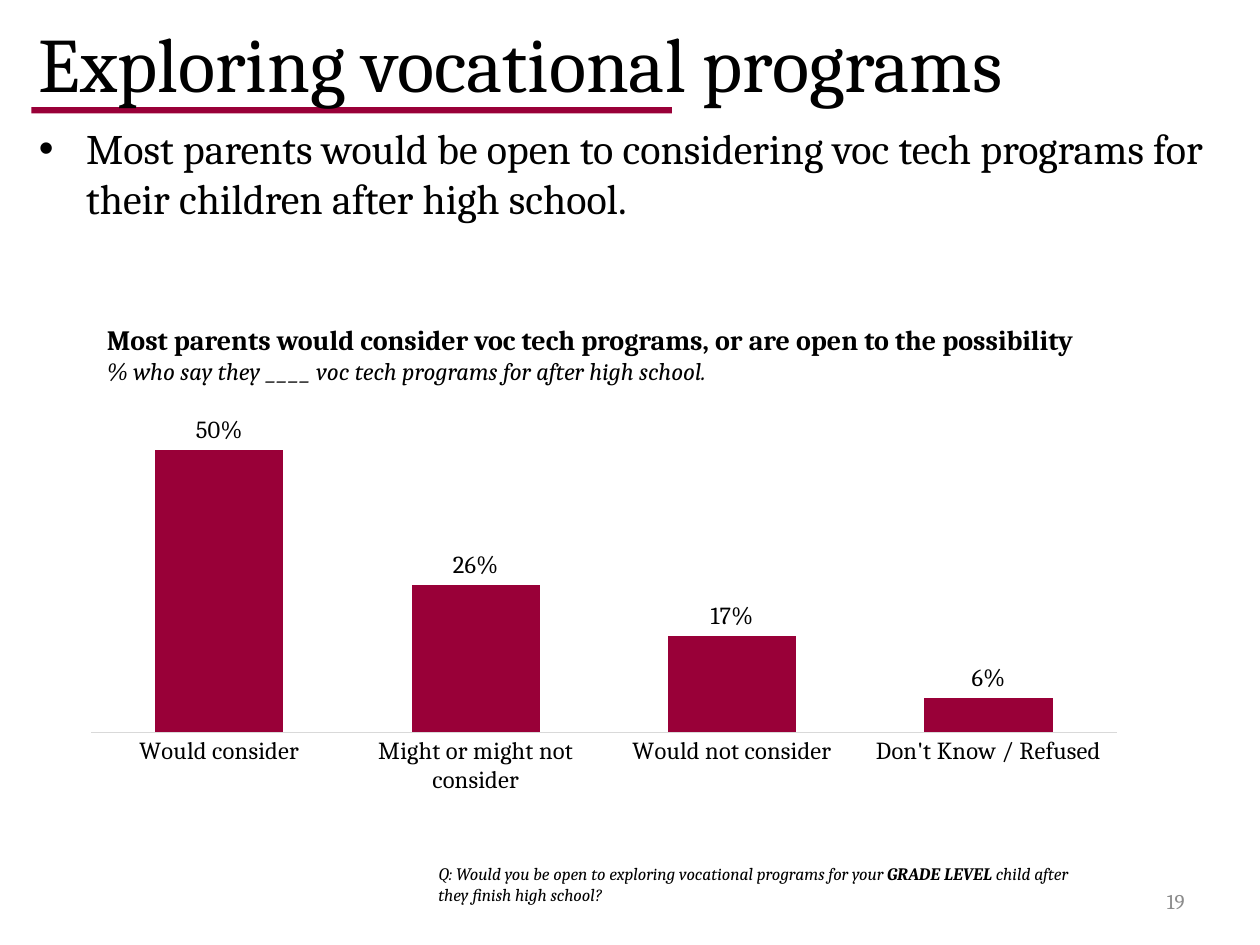
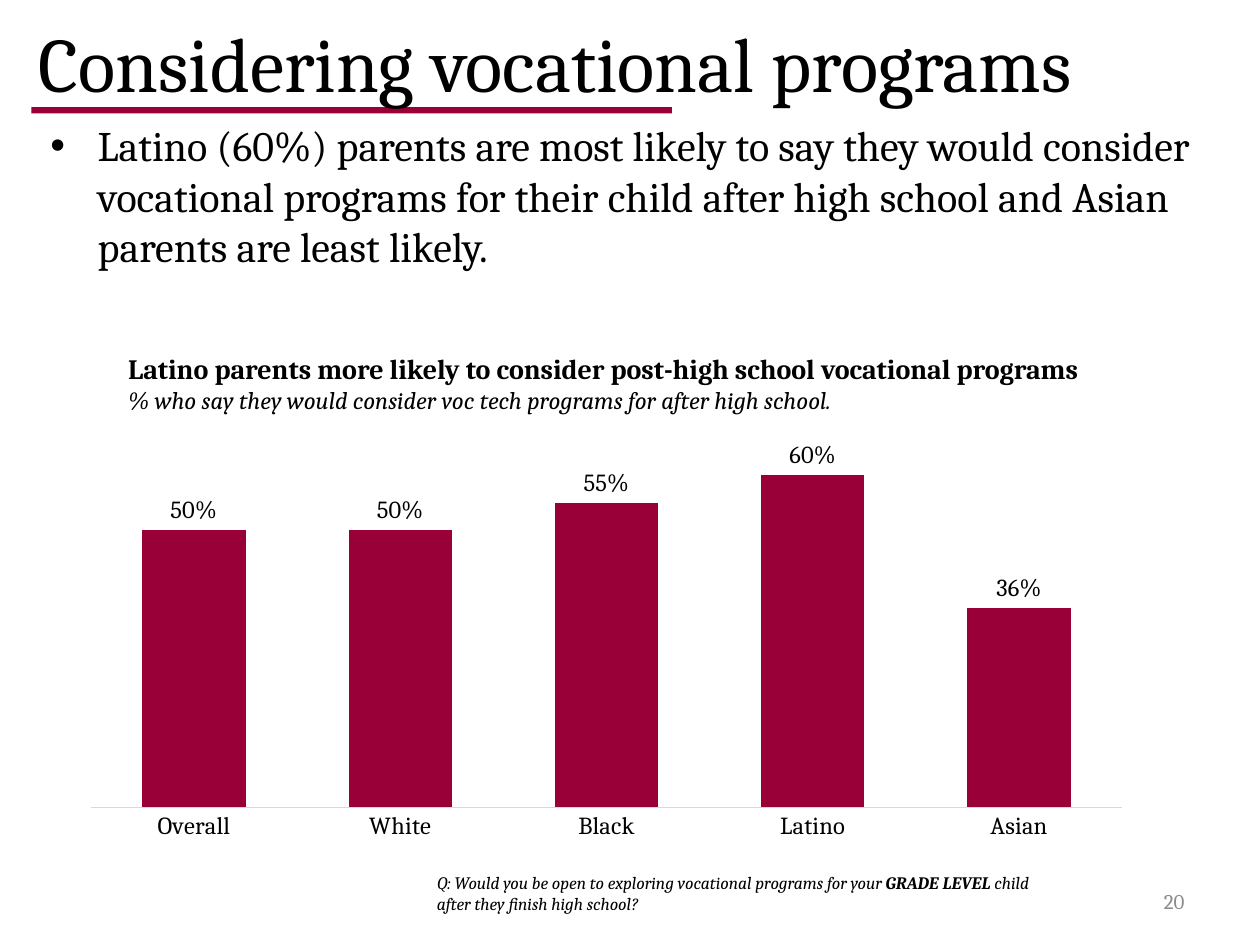
from lxml import etree
from pptx import Presentation
from pptx.chart.data import CategoryChartData
from pptx.dml.color import RGBColor
from pptx.enum.chart import XL_CHART_TYPE, XL_LABEL_POSITION, XL_TICK_MARK
from pptx.enum.shapes import MSO_SHAPE
from pptx.enum.text import MSO_ANCHOR, MSO_AUTO_SIZE, PP_ALIGN
from pptx.oxml.ns import qn
from pptx.util import Pt

COLUMNS = XL_CHART_TYPE.COLUMN_CLUSTERED
OUTSIDE_END = XL_LABEL_POSITION.OUTSIDE_END
NO_TICKS = XL_TICK_MARK.NONE
RECTANGLE = MSO_SHAPE.RECTANGLE
MIDDLE, TOP = MSO_ANCHOR.MIDDLE, MSO_ANCHOR.TOP
NO_FIT = MSO_AUTO_SIZE.NONE
LEFT, RIGHT = PP_ALIGN.LEFT, PP_ALIGN.RIGHT

CRIMSON = RGBColor(0x99, 0x00, 0x38)
BLACK = RGBColor(0x00, 0x00, 0x00)
GRAY = RGBColor(0x8C, 0x8C, 0x8C)
AXIS_GRAY = RGBColor(0xD9, 0xD9, 0xD9)

FONT = "Cambria"
PERCENT = "###0%"
QUESTION = (
    "Q: Would you be open to exploring vocational programs for your ",
    "GRADE LEVEL",
    " child after they finish high school?",
)


class SurveyDeck:
    """Holds the deck style and the slide being built."""

    def __init__(self):
        self.prs = Presentation()
        self.prs.slide_width, self.prs.slide_height = Pt(720), Pt(540)
        self.slide = None

    def style(self, font, size, color=BLACK, bold=False, italic=False):
        font.name, font.size = FONT, Pt(size)
        font.bold, font.italic = bold, italic
        font.color.rgb = color

    def place(self, shape, box):
        shape.left, shape.top, shape.width, shape.height = map(Pt, box)

    def frame(self, shape, anchor=TOP):
        frame = shape.text_frame
        frame.word_wrap = True
        frame.auto_size = NO_FIT
        frame.vertical_anchor = anchor
        return frame

    def text_box(self, box, anchor=TOP):
        return self.frame(self.slide.shapes.add_textbox(*map(Pt, box)), anchor)

    def start(self, title, number):
        self.slide = self.prs.slides.add_slide(self.prs.slide_layouts[1])
        self.title_rule()
        self.title(title)
        self.page_number(number)

    def title_rule(self):
        rule = self.slide.shapes.add_shape(
            RECTANGLE, Pt(18), Pt(61.2), Pt(366), Pt(3.6))
        rule.shadow.inherit = False
        rule.fill.solid()
        rule.fill.fore_color.rgb = CRIMSON
        rule.line.fill.background()
        # Send the rule behind the title
        self.slide.shapes._spTree.insert(2, rule._element)

    def title(self, text):
        heading = self.slide.shapes.title
        self.place(heading, (15, 0, 648, 70))
        frame = self.frame(heading, MIDDLE)
        frame.text = text
        frame.paragraphs[0].alignment = LEFT
        self.style(frame.paragraphs[0].runs[0].font, 44)

    def page_number(self, number):
        frame = self.text_box((516, 500.5, 168, 28.8), MIDDLE)
        frame.text = str(number)
        frame.paragraphs[0].alignment = RIGHT
        self.style(frame.paragraphs[0].runs[0].font, 12, GRAY)

    def finding(self, text, box):
        body = self.slide.placeholders[1]
        self.place(body, box)
        frame = self.frame(body)
        frame.text = text
        paragraph = frame.paragraphs[0]
        properties = paragraph._p.get_or_add_pPr()
        properties.set("marL", str(Pt(27)))
        properties.set("indent", str(Pt(-27)))
        paragraph.space_before = Pt(0)
        etree.SubElement(properties, qn("a:buChar"), char="•")
        self.style(paragraph.runs[0].font, 24)

    def chart_heading(self, headline, measure, box):
        frame = self.text_box(box)
        frame.text = f"{headline}\n{measure}"
        first, second = frame.paragraphs
        self.style(first.runs[0].font, 16, bold=True)
        self.style(second.runs[0].font, 14, italic=True)

    def question(self, box):
        paragraph = self.text_box(box).paragraphs[0]
        for part in QUESTION:
            run = paragraph.add_run()
            run.text = part
            self.style(run.font, 10, italic=True, bold=part == "GRADE LEVEL")

    def column_chart(self, shares, box, plot_area, top_share):
        data = CategoryChartData(number_format=PERCENT)
        data.categories = list(shares)
        data.add_series("Series 1", list(shares.values()))
        chart = self.slide.shapes.add_chart(COLUMNS, *map(Pt, box), data).chart
        chart.has_title = chart.has_legend = False
        self.style(chart.font, 14)

        # Axes
        values = chart.value_axis
        values.minimum_scale, values.maximum_scale = 0, top_share
        values.has_major_gridlines = False
        values.tick_labels.number_format = PERCENT
        values.tick_labels.number_format_is_linked = False
        values.visible = False
        categories = chart.category_axis
        categories.major_tick_mark = categories.minor_tick_mark = NO_TICKS
        categories.format.line.color.rgb = AXIS_GRAY
        categories.format.line.width = Pt(0.75)
        self.style(categories.tick_labels.font, 14)

        # Columns and labels
        plot = chart.plots[0]
        plot.gap_width, plot.overlap = 100, -27
        plot.vary_by_categories = False
        columns = plot.series[0]
        columns.format.fill.solid()
        columns.format.fill.fore_color.rgb = CRIMSON
        labels = columns.data_labels
        labels.show_value = True
        labels.position = OUTSIDE_END
        labels.number_format = PERCENT
        labels.number_format_is_linked = False
        self.style(labels.font, 14)
        self.fix_plot_area(chart, plot_area)

    def fix_plot_area(self, chart, plot_area):
        area = chart._chartSpace.chart.plotArea
        for old in area.findall(qn("c:layout")):
            area.remove(old)
        layout = etree.Element(qn("c:layout"))
        manual = etree.SubElement(layout, qn("c:manualLayout"))
        settings = {"layoutTarget": "inner", "xMode": "edge", "yMode": "edge",
                    **dict(zip("xywh", plot_area))}
        for tag, value in settings.items():
            etree.SubElement(manual, qn(f"c:{tag}"), val=str(value))
        area.insert(0, layout)


def main():
    deck = SurveyDeck()

    # Openness to vocational programs
    deck.start("Exploring vocational programs", 19)
    deck.finding(
        "Most parents would be open to considering voc tech programs for "
        "their children after high school.", (15, 66.3, 690, 356))
    deck.chart_heading(
        "Most parents would consider voc tech programs, or are open to the possibility",
        "% who say they ____ voc tech programs for after high school.",
        (54, 180.7, 660, 44))
    deck.question((243.4, 489.6, 384.5, 41))
    deck.column_chart(
        {"Would consider": 0.5, "Might or might not consider": 0.26,
         "Would not consider": 0.17, "Don't Know / Refused": 0.06},
        (46, 219, 610.5, 285), (0.01, 0.02, 0.96, 0.68), 0.6)

    # Differences between groups of parents
    deck.start("Considering vocational programs", 20)
    deck.finding(
        "Latino (60%) parents are most likely to say they would consider "
        "vocational programs for their child after high school and Asian "
        "parents are least likely.", (21.6, 64.8, 683.3, 150.5))
    deck.column_chart(
        {"Overall": 0.5, "White": 0.5, "Black": 0.55, "Latino": 0.6, "Asian": 0.36},
        (39.6, 234.7, 614, 250.5), (0.02, 0.02, 0.96, 0.885), 0.7)
    deck.question((242.6, 494.6, 357, 41))
    deck.chart_heading(
        "Latino parents more likely to consider post-high school vocational programs",
        "% who say they would consider voc tech programs for after high school.",
        (66.2, 197.3, 630, 44))

    deck.prs.save("out.pptx")


if __name__ == "__main__":
    main()
